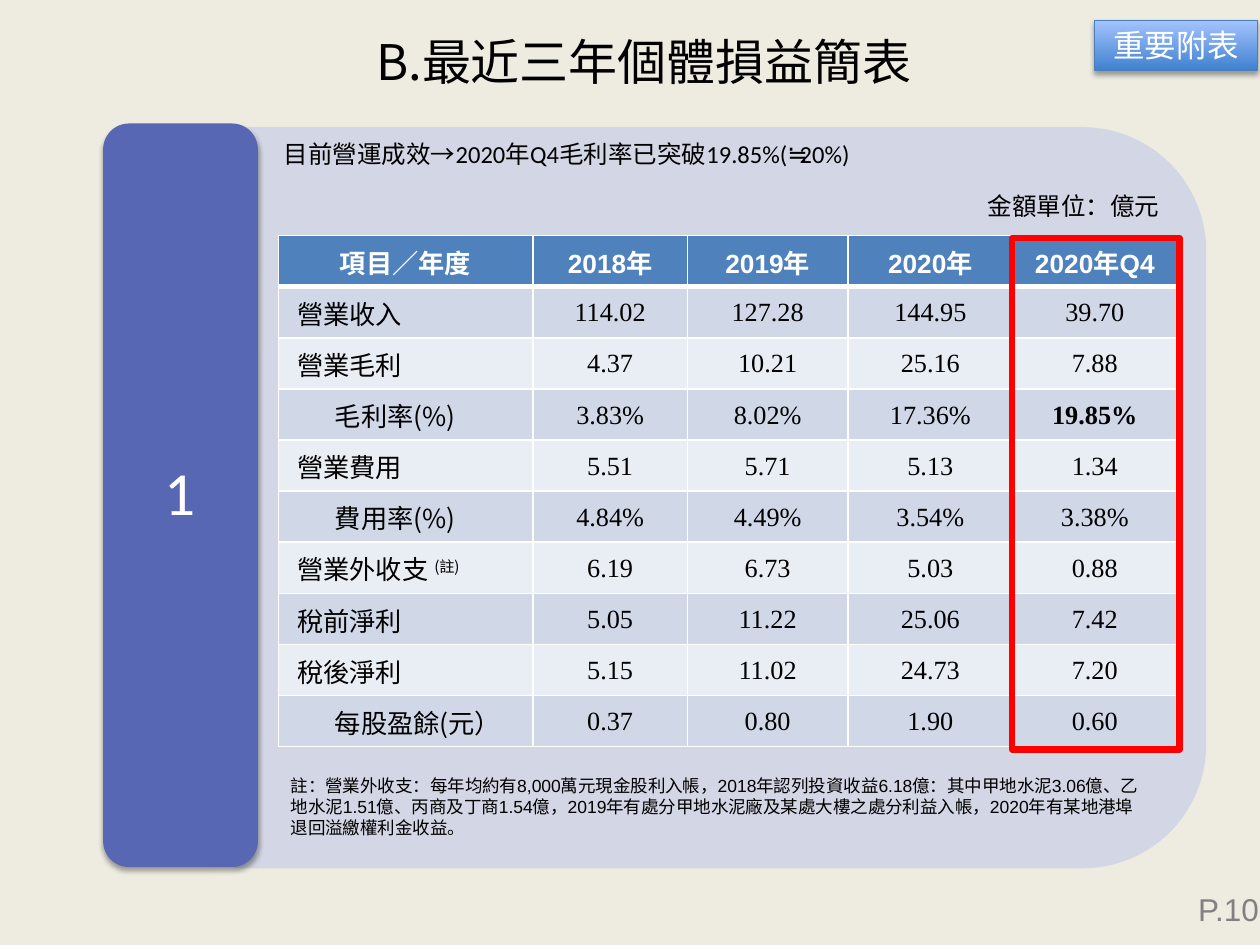
from lxml import etree
from pptx import Presentation
from pptx.dml.color import RGBColor
from pptx.enum.shapes import MSO_SHAPE
from pptx.enum.text import MSO_ANCHOR, PP_ALIGN
from pptx.oxml import parse_xml
from pptx.oxml.ns import qn
from pptx.util import Cm, Pt

CENTER, LEFT = PP_ALIGN.CENTER, PP_ALIGN.LEFT
MIDDLE, TOP = MSO_ANCHOR.MIDDLE, MSO_ANCHOR.TOP
RECT, ROUND = MSO_SHAPE.RECTANGLE, MSO_SHAPE.ROUNDED_RECTANGLE
ROUND_TOP = MSO_SHAPE.ROUND_2_SAME_RECTANGLE
SC, JP = "Noto Sans CJK SC", "Noto Sans CJK JP"
NS = 'xmlns:a="http://schemas.openxmlformats.org/drawingml/2006/main"'
SHADOW = (f'<a:effectLst {NS}><a:outerShdw blurRad="39370" dist="22860" dir="5400000" '
          'rotWithShape="0"><a:srgbClr val="000000"><a:alpha val="35000"/></a:srgbClr>'
          '</a:outerShdw></a:effectLst>')


def color(value):
    return RGBColor.from_string(value)


def style(p, size, font, fill, align=LEFT, bold=False):
    p.alignment = align
    for r in p.runs:
        r.font.size, r.font.name, r.font.bold = Pt(size), font, bold
        r.font.color.rgb = color(fill)
        ea = etree.SubElement(r.font._element, qn("a:ea"))
        ea.set("typeface", font if font in (SC, JP) else JP)


prs = Presentation()
prs.slide_width, prs.slide_height = Cm(25.4), Cm(19.05)
s = prs.slides.add_slide(prs.slide_layouts[6])
s.background.fill.solid()
s.background.fill.fore_color.rgb = color("EEECE1")

# Panel, numbered tab, table frame and badge; the frame is drawn over the table
shapes = {}
for name, kind, box, fill in [
    ("panel", ROUND_TOP, (7.04, 0.23, 14.94, 19.61), "D1D4E5"),
    ("tab", ROUND, (2.08, 2.49, 3.12, 14.99), "5767B4"),
    ("frame", RECT, (20.4, 4.8, 3.38, 10.31), None),
    ("badge", RECT, (22.07, 0.41, 3.28, 1.02), "3F80CE"),
]:
    if name == "frame":
        # Income table
        rows = [
            ("項目／年度", "2018年", "2019年", "2020年", "2020年Q4"),
            ("營業收入", "114.02", "127.28", "144.95", "39.70"),
            ("營業毛利", "4.37", "10.21", "25.16", "7.88"),
            ("毛利率(%)", "3.83%", "8.02%", "17.36%", "19.85%"),
            ("營業費用", "5.51", "5.71", "5.13", "1.34"),
            ("費用率(%)", "4.84%", "4.49%", "3.54%", "3.38%"),
            ("營業外收支 ", "6.19", "6.73", "5.03", "0.88"),
            ("稅前淨利", "5.05", "11.22", "25.06", "7.42"),
            ("稅後淨利", "5.15", "11.02", "24.73", "7.20"),
            ("每股盈餘(元）", "0.37", "0.80", "1.90", "0.60"),
        ]
        widths = [5.13, 3.12, 3.23, 3.33, 3.3]
        table = s.shapes.add_table(len(rows), len(widths), Cm(5.61), Cm(4.75),
                                   Cm(sum(widths)), Cm(10.3)).table
        for column, width in zip(table.columns, widths):
            column.width = Cm(width)
        for i, row in enumerate(rows):
            table.rows[i].height = Cm(1.03)
            for j, text in enumerate(row):
                cell = table.cell(i, j)
                cell.vertical_anchor = MIDDLE
                cell.margin_left = cell.margin_right = cell.margin_top = Cm(0.03)
                cell.margin_bottom = 0
                p = cell.text_frame.paragraphs[0]
                p.text = text
                if i == 0:
                    style(p, 15, "Arial", "FFFFFF", CENTER, True)
                elif j == 0:
                    cell.margin_left = Cm(1.14 if i in (3, 5, 9) else 0.38)
                    if i == 6:
                        p.add_run().text = "(註)"
                    style(p, 15, JP, "000000")
                    if i == 6:
                        p.runs[1].font._element.set("baseline", "30000")
                else:
                    style(p, 15, "Times New Roman", "000000", CENTER, text == "19.85%")
                cell.fill.solid()
                cell.fill.fore_color.rgb = color(
                    "4F81BD" if i == 0 else "D0D8E8" if i % 2 else "E9EDF4")
                for k, side in enumerate("LRTB"):
                    thick = (i == 0 and side == "B") or (i == 1 and side == "T")
                    cell._tc.get_or_add_tcPr().insert(k, parse_xml(
                        f'<a:ln{side} {NS} w="{Pt(3 if thick else 1)}"><a:solidFill>'
                        f'<a:srgbClr val="FFFFFF"/></a:solidFill></a:ln{side}>'))
    sp = s.shapes.add_shape(kind, *map(Cm, box))
    shapes[name] = sp
    sp.line.fill.background()
    if fill:
        sp.fill.solid()
        sp.fill.fore_color.rgb = color(fill)
    else:
        sp.fill.background()
    if name in ("tab", "badge"):
        sp._element.spPr.append(parse_xml(SHADOW))
    else:
        sp.shadow.inherit = False

panel, frame, badge = shapes["panel"], shapes["frame"], shapes["badge"]
panel.rotation = 90
alpha = etree.SubElement(panel._element.spPr.find(".//" + qn("a:srgbClr")), qn("a:alpha"))
alpha.set("val", "90000")
frame.line.color.rgb = color("FF0000")
frame.line.width = Pt(3.5)

# Badge gradient and label
badge.fill.gradient()
badge.fill.gradient_angle = 90
for stop, position, value in zip(badge.fill.gradient_stops, (0, 1), ("3F80CE", "A4C4FF")):
    stop.position = position
    stop.color.rgb = color(value)
badge.line.color.rgb = color("4B7EBC")
badge.line.width = Pt(0.75)
badge.text_frame.text = "重要附表"
badge.text_frame.vertical_anchor = TOP
style(badge.text_frame.paragraphs[0], 18, SC, "FFFFFF", CENTER)

# Text boxes: box, side and top margins, anchor, text, size, font, colour, alignment
note = ("註：營業外收支：每年均約有8,000萬元現金股利入帳，2018年認列投資收益6.18億："
        "其中甲地水泥3.06億、乙地水泥1.51億、丙商及丁商1.54億，"
        "2019年有處分甲地水泥廠及某處大樓之處分利益入帳，2020年有某地港埠退回溢繳權利金收益。")
paragraphs = {}
for name, box, side, top, anchor, text, size, font, fill, align in [
    ("title", (2.21, 0.51, 21.54, 1.57), 0.25, 0.13, TOP,
     "B.最近三年個體損益簡表", 28, SC, "000000", CENTER),
    ("headline", (4.7, 2.54, 19.51, 14.2), 0.69, 0.36, TOP,
     "目前營運成效→2020年Q4毛利率已突破19.85%(≒20%)", 14, "Calibri", "000000", LEFT),
    ("number", (2.18, 3.23, 2.9, 13.54), 0.38, 0.18, MIDDLE,
     "1", 35, "Calibri", "FFFFFF", CENTER),
    ("note", (5.61, 15.49, 17.7, 1.55), 0.25, 0.13, TOP, note, 10, "Arial", "000000", LEFT),
    ("unit", (19.66, 3.73, 4.09, 0.86), 0.25, 0.13, TOP,
     "金額單位：億元", 14, "Arial", "000000", LEFT),
    ("page", (24.13, 17.81, 1.27, 1.02), 0, 0.13, TOP, "P.10", 18, "Arial", "808080", CENTER),
]:
    tf = s.shapes.add_textbox(*map(Cm, box)).text_frame
    tf.word_wrap = True
    tf.vertical_anchor = anchor
    tf.margin_left = tf.margin_right = Cm(side)
    tf.margin_top = tf.margin_bottom = Cm(top)
    tf.text = text
    paragraphs[name] = tf.paragraphs[0]
    style(tf.paragraphs[0], size, font, fill, align)

headline = paragraphs["headline"]
headline.line_spacing, headline.space_after = Pt(16), Pt(6)
pPr = headline._p.get_or_add_pPr()
pPr.set("marL", str(Cm(1.27)))
pPr.set("indent", str(Cm(-0.94)))
paragraphs["number"].line_spacing = 0.9

prs.save("out.pptx")
